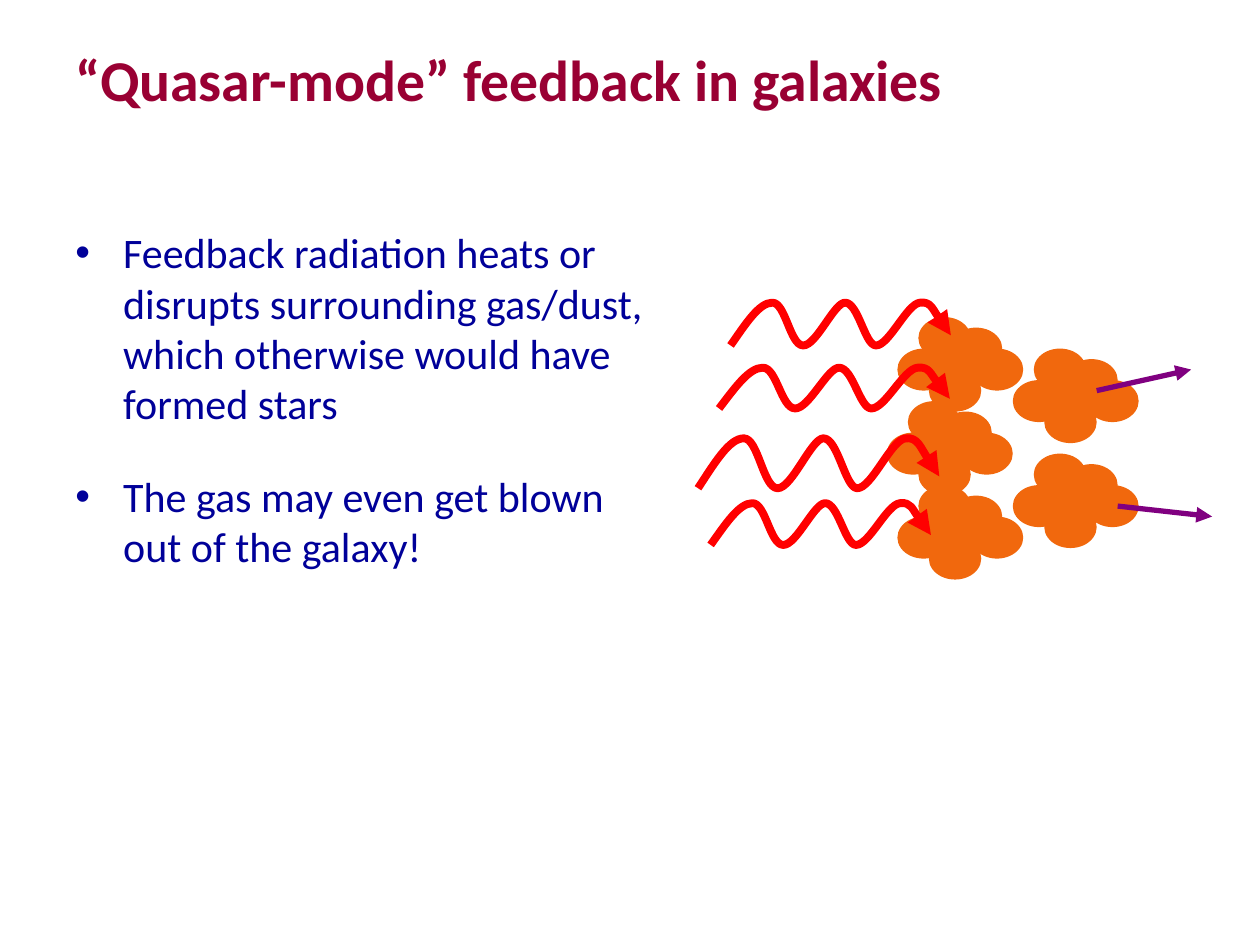
import pptx
import pptx.dml.color
import pptx.enum.shapes
import pptx.enum.text
import pptx.oxml
import pptx.oxml.ns
import pptx.util

SCENE_COLUMNS, SCENE_ROWS = 49, 27
CLOUD_CELLS = [(19, 2), (18, 10), (19, 18), (30, 15), (30, 5)]
PUFF_CELLS = [(3, 5), (2, 0), (0, 3), (5, 1), (7, 3), (3, 3)]
PUFF_COLUMNS, PUFF_ROWS = 5, 4
OUTFLOW_CELLS = [((38, 9), (47, 7)), ((40, 20), (49, 21))]
WAVE_CELLS = [(2, 6.7, 22, 4), (0, 13.4, 23, 4.9), (1.2, 19.6, 21, 4.1), (3.1, 0.5, 21, 4.2)]
WAVE_SHARES = [
    (0, 1), (0.07, 0.5), (0.13, 0.03), (0.19, 0.03),
    (0.25, 0.03), (0.27, 1), (0.33, 1),
    (0.39, 1), (0.47, 0.03), (0.52, 0.03),
    (0.58, 0.03), (0.61, 1), (0.66, 1),
    (0.72, 1), (0.8, 0.06), (0.86, 0.03),
    (0.91, 0), (0.98, 0.65), (1, 0.77),
]
BULLETS = [
    "Feedback radiation heats or disrupts surrounding gas/dust, which otherwise would have formed stars",
    "The gas may even get blown out of the galaxy!",
]


def color(hex_string):
    return pptx.dml.color.RGBColor.from_string(hex_string)


def inches(*lengths):
    return [pptx.util.Inches(length) for length in lengths]


def style_font(font, size, hex_string, bold=False):
    font.name = "Calibri"
    font.size = pptx.util.Pt(size)
    font.bold = bold
    font.color.rgb = color(hex_string)


def add_child(parent, tag, **attributes):
    element = parent.makeelement(pptx.oxml.ns.qn(tag), attributes)
    parent.append(element)
    return element


def style_arrow(shape, hex_string, width):
    shape.line.color.rgb = color(hex_string)
    shape.line.width = pptx.util.Pt(width)
    add_child(shape._element.spPr.get_or_add_ln(), "a:tailEnd", type="triangle")


def add_title(slide, box):
    title = slide.shapes.title
    title.left, title.top, title.width, title.height = inches(*box)
    frame = title.text_frame
    frame.text = "“Quasar-mode” feedback in galaxies"
    frame.vertical_anchor = pptx.enum.text.MSO_ANCHOR.TOP
    paragraph = frame.paragraphs[0]
    paragraph.alignment = pptx.enum.text.PP_ALIGN.LEFT
    style_font(paragraph.runs[0].font, 33, "990033", bold=True)


def add_bullets(slide, box):
    frame = slide.shapes.add_textbox(*inches(*box)).text_frame
    frame.word_wrap = True
    frame.text = "\n".join(BULLETS)
    indent = pptx.util.Inches(0.38)
    for index, paragraph in enumerate(frame.paragraphs):
        properties = paragraph._p.get_or_add_pPr()
        properties.set("marL", str(indent))
        properties.set("indent", str(-indent))
        add_child(properties, "a:buFont", typeface="Arial")
        add_child(properties, "a:buChar", char="•")
        paragraph.space_before = pptx.util.Pt(24 if index else 0)
        style_font(paragraph.runs[0].font, 24, "000099")


def add_cloud(shapes, box):
    left, top, cell_width, cell_height = box
    for column, row in PUFF_CELLS:
        puff = shapes.add_shape(
            pptx.enum.shapes.MSO_SHAPE.OVAL,
            *inches(left + column * cell_width, top + row * cell_height,
                    PUFF_COLUMNS * cell_width, PUFF_ROWS * cell_height),
        )
        puff.shadow.inherit = False
        puff.fill.solid()
        puff.fill.fore_color.rgb = color("F1680D")
        puff.line.fill.background()


def add_wave(shapes, box):
    left, top, width, height = box
    points = [inches(left + x * width, top + y * height) for x, y in WAVE_SHARES]
    builder = shapes.build_freeform(*points[0])
    builder.add_line_segments(points[1:], close=False)
    wave = builder.convert_to_shape()
    outline = wave._element.find(".//" + pptx.oxml.ns.qn("a:path"))
    segments = outline.findall(pptx.oxml.ns.qn("a:lnTo"))
    for start in range(0, len(segments), 3):
        curve = add_child(outline, "a:cubicBezTo")
        for segment in segments[start:start + 3]:
            curve.append(segment[0])
            outline.remove(segment)
    wave.shadow.inherit = False
    wave.fill.background()
    style_arrow(wave, "FF0000", 4.5)


def add_outflow(shapes, start, end):
    arrow = shapes.add_connector(
        pptx.enum.shapes.MSO_CONNECTOR.STRAIGHT, *inches(*start, *end)
    )
    style_arrow(arrow, "800080", 3)
    add_child(arrow._element.spPr, "a:effectLst")


def add_scene(slide, box):
    left, top, width, height = box
    cell_width, cell_height = width / SCENE_COLUMNS, height / SCENE_ROWS
    shapes = slide.shapes.add_group_shape().shapes

    def locate(column, row):
        return left + column * cell_width, top + row * cell_height

    for cell in CLOUD_CELLS:
        add_cloud(shapes, (*locate(*cell), cell_width, cell_height))
    for start, end in OUTFLOW_CELLS:
        add_outflow(shapes, locate(*start), locate(*end))
    for column, row, columns, rows in WAVE_CELLS:
        add_wave(shapes, (*locate(column, row), columns * cell_width, rows * cell_height))


def main():
    presentation = pptx.Presentation()
    presentation.slide_width, presentation.slide_height = inches(10, 7.5)
    slide = presentation.slides.add_slide(presentation.slide_layouts[5])
    add_title(slide, (0.5, 0.3, 9, 1.25))
    add_scene(slide, (5.54, 2.35, 4.08, 2.25))
    add_bullets(slide, (0.5, 1.75, 4.86, 4.45))
    presentation.save("out.pptx")


if __name__ == "__main__":
    main()
